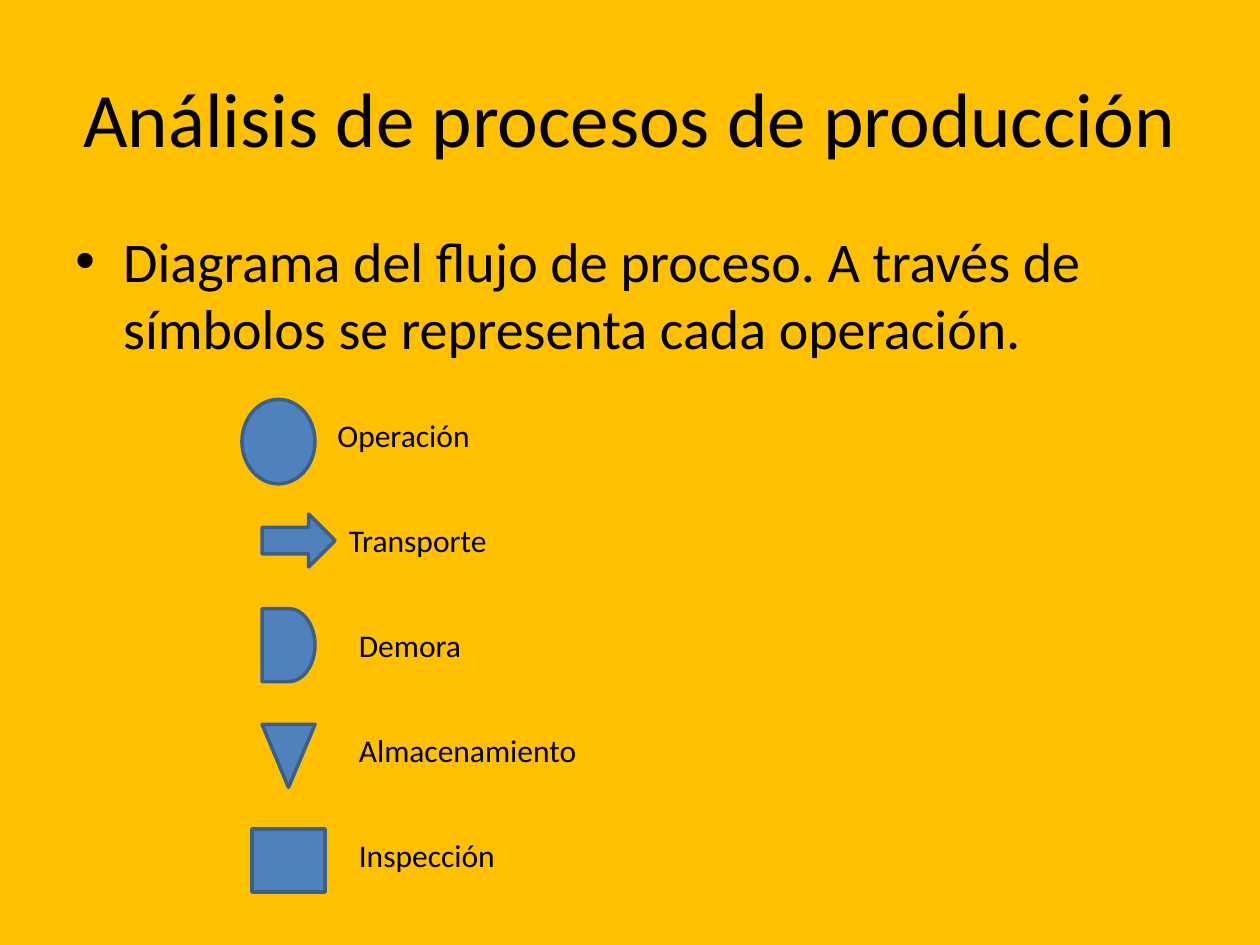
from lxml.etree import SubElement
from pptx import Presentation
from pptx.dml.color import RGBColor
from pptx.enum.shapes import MSO_SHAPE
from pptx.enum.text import MSO_ANCHOR, MSO_AUTO_SIZE, PP_ALIGN
from pptx.oxml.ns import qn
from pptx.util import Inches, Pt

# Content
TITLE = "Análisis de procesos de producción"
BODY = "Diagrama del flujo de proceso. A través de símbolos se representa cada operación."

# Label, label left, label width, symbol, symbol box (left, top, width, height)
STEPS = [
    ("Operación", 2.58, 1.42, MSO_SHAPE.OVAL, (1.92, 3.17, 0.58, 0.67)),
    ("Transporte", 2.67, 1.42, MSO_SHAPE.RIGHT_ARROW, (2.08, 4.08, 0.58, 0.42)),
    ("Demora", 2.75, 1.42, MSO_SHAPE.FLOWCHART_DELAY, (2.08, 4.83, 0.42, 0.58)),
    ("Almacenamiento", 2.75, 2.5, MSO_SHAPE.FLOWCHART_MERGE, (2.08, 5.75, 0.42, 0.5)),
    ("Inspección", 2.75, 2.5, MSO_SHAPE.FLOWCHART_PROCESS, (2, 6.58, 0.58, 0.5)),
]
FIRST_LABEL_TOP = 3.25
LABEL_PITCH = 2.5 / 3
LABEL_HEIGHT = 0.4

THEME = {
    "font": "Calibri",
    "background": RGBColor(0xFF, 0xC0, 0x00),
    "text": RGBColor(0x00, 0x00, 0x00),
    "symbol": RGBColor(0x4F, 0x81, 0xBD),
    "outline": RGBColor(0x3A, 0x5F, 0x8C),
    "outline_width": Pt(2),
    "title_size": Pt(44),
    "body_size": Pt(32),
    "label_size": Pt(18),
}


def add_text(slide, text, box, size):
    shape = slide.shapes.add_textbox(*map(Inches, box))
    shape.text_frame.word_wrap = True
    paragraph = shape.text_frame.paragraphs[0]
    paragraph.text = text
    paragraph.font.name = THEME["font"]
    paragraph.font.size = size
    paragraph.font.color.rgb = THEME["text"]
    return shape.text_frame


def add_bullet(paragraph, indent):
    properties = paragraph._p.get_or_add_pPr()
    properties.set("marL", str(Inches(indent)))
    properties.set("indent", str(-Inches(indent)))
    # Schema order: spacing, bullet font, bullet character, then run defaults
    spacing = properties.makeelement(qn("a:spcBef"))
    SubElement(spacing, qn("a:spcPct"), val="20000")
    bullet_font = properties.makeelement(qn("a:buFont"), typeface="Arial")
    bullet = properties.makeelement(qn("a:buChar"), char="•")
    for position, element in enumerate((spacing, bullet_font, bullet)):
        properties.insert(position, element)


def add_symbol(slide, kind, box):
    shape = slide.shapes.add_shape(kind, *map(Inches, box))
    shape.shadow.inherit = False
    shape.fill.solid()
    shape.fill.fore_color.rgb = THEME["symbol"]
    shape.line.color.rgb = THEME["outline"]
    shape.line.width = THEME["outline_width"]


def main():
    presentation = Presentation()
    presentation.slide_width = Inches(10)
    presentation.slide_height = Inches(7.5)
    slide = presentation.slides.add_slide(presentation.slide_layouts[6])
    slide.background.fill.solid()
    slide.background.fill.fore_color.rgb = THEME["background"]

    # Title and introduction
    title = add_text(slide, TITLE, (0.5, 0.3, 9, 1.25), THEME["title_size"])
    title.vertical_anchor = MSO_ANCHOR.MIDDLE
    title.paragraphs[0].alignment = PP_ALIGN.CENTER
    body = add_text(slide, BODY, (0.5, 1.75, 9, 4.95), THEME["body_size"])
    add_bullet(body.paragraphs[0], 0.38)

    # Process symbols with their labels
    for row, (label, left, width, kind, symbol_box) in enumerate(STEPS):
        add_symbol(slide, kind, symbol_box)
        top = FIRST_LABEL_TOP + row * LABEL_PITCH
        frame = add_text(slide, label, (left, top, width, LABEL_HEIGHT), THEME["label_size"])
        frame.auto_size = MSO_AUTO_SIZE.SHAPE_TO_FIT_TEXT

    presentation.save("out.pptx")


if __name__ == "__main__":
    main()
